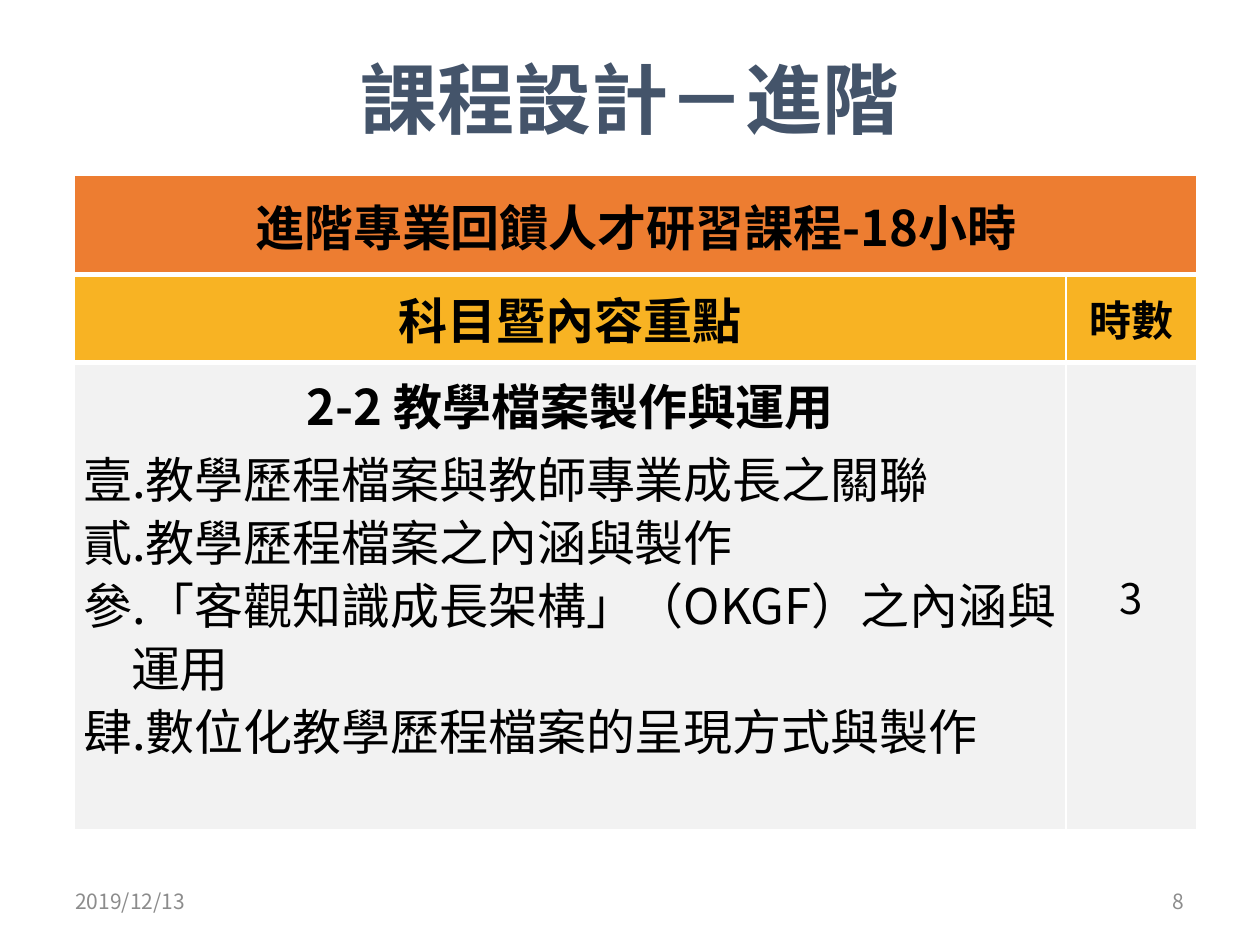
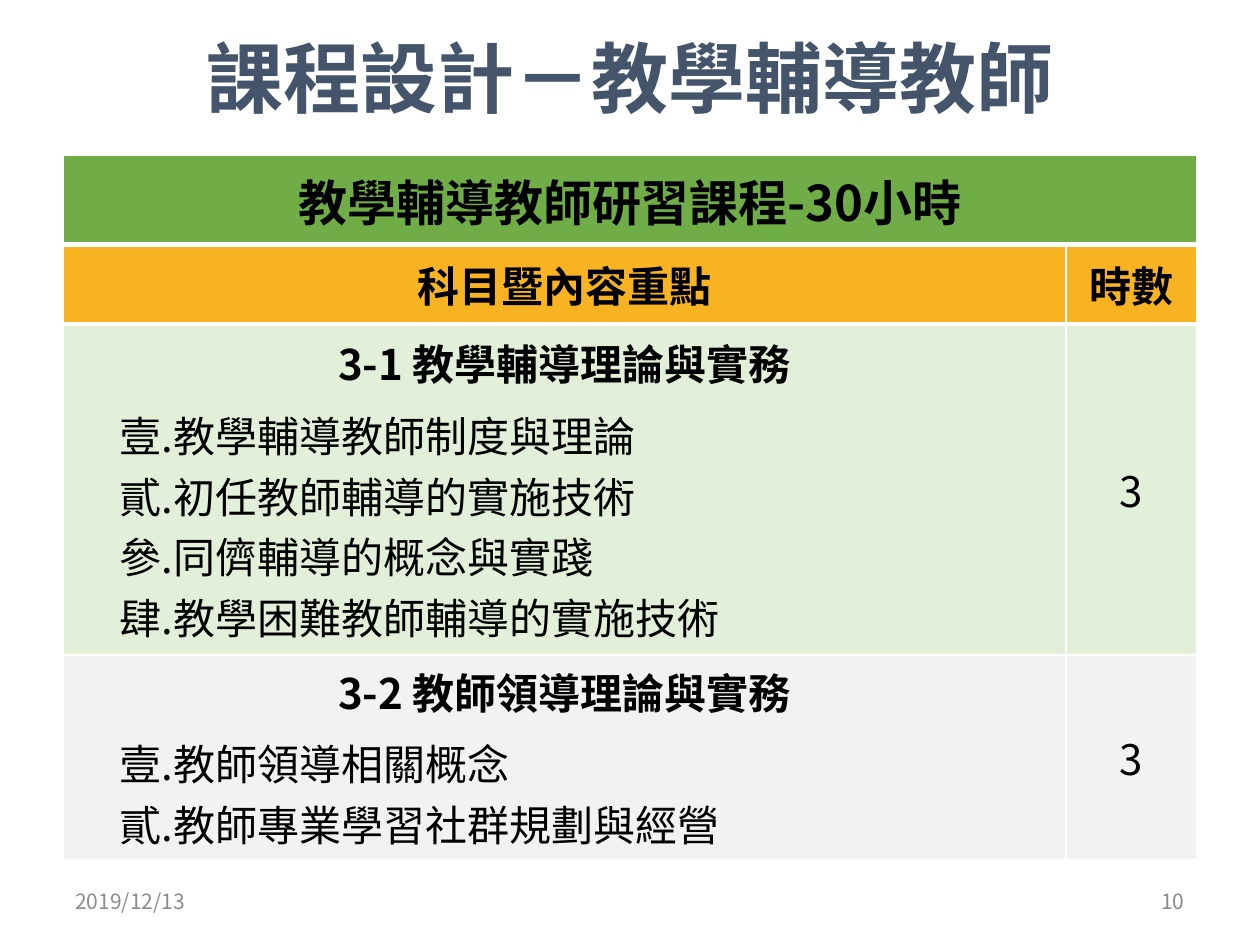
from lxml import etree
from pptx import Presentation
from pptx import util as u
from pptx.dml.color import RGBColor
from pptx.enum import text
from pptx.oxml.ns import qn

FONT = "Noto Sans CJK SC"
INK, NAVY, GREY, WHITE = "000000", "44546A", "8C8C8C", "FFFFFF"
AMBER, PALE = "F8B323", "F2F2F2"
WIDE, HIGH = u.Inches(10), u.Inches(7.5)
EDGE = 5            # side margin, percent of the width
HOURS = 10.4        # width of the hours column, percent of the width
LEFT, MID, RIGHT = (text.PP_ALIGN.LEFT, text.PP_ALIGN.CENTER,
                    text.PP_ALIGN.RIGHT)


# Lengths as percent of the slide
def wide(share):
    return u.Emu(round(WIDE * share / 100))


def high(share):
    return u.Emu(round(HIGH * share / 100))


def hue(code):
    return RGBColor.from_string(code)


# Text
def style(para, size, color=INK, bold=False, align=LEFT):
    para.alignment = align
    for run in para.runs:
        font = run.font
        font.name, font.size, font.bold = FONT, u.Pt(size), bold
        font.color.rgb = hue(color)
        etree.SubElement(font._element, qn("a:ea"), typeface=FONT)


def number(para, hang):
    props = para._p.get_or_add_pPr()
    indent = u.Inches(0.38)
    props.set("marL", str(indent))
    props.set("indent", str(-indent if hang else 0))
    etree.SubElement(props, qn("a:buFont"), typeface=FONT)
    etree.SubElement(props, qn("a:buAutoNum"), type="ea1ChtPeriod")


def add_title(slide, words, top):
    title = slide.shapes.title
    title.left, title.top = wide(EDGE), high(top)
    title.width, title.height = wide(100 - 2 * EDGE), high(16.67)
    frame = title.text_frame
    frame.text = words
    frame.vertical_anchor = text.MSO_ANCHOR.MIDDLE
    style(frame.paragraphs[0], 44, NAVY, True, MID)


def add_foot(slide, words, left, align):
    box = slide.shapes.add_textbox(wide(left), high(92.67),
                                   wide(23.33), high(5.33))
    frame = box.text_frame
    frame.word_wrap = True
    frame.vertical_anchor = text.MSO_ANCHOR.MIDDLE
    frame.text = words
    style(frame.paragraphs[0], 12, GREY, align=align)


# Table cells
def paint(cell, fill, above, below):
    props = cell._tc.get_or_add_tcPr()
    for side, width in zip("LRTB", (1, 1, above, below)):
        line = etree.SubElement(props, qn("a:ln" + side),
                                w=str(u.Pt(width)))
        solid = etree.SubElement(line, qn("a:solidFill"))
        etree.SubElement(solid, qn("a:srgbClr"), val=WHITE)
    cell.fill.solid()
    cell.fill.fore_color.rgb = hue(fill)
    cell.vertical_anchor = text.MSO_ANCHOR.MIDDLE


def trim(cell, low=0):
    cell.margin_left = cell.margin_right = u.Inches(0.07)
    cell.margin_top, cell.margin_bottom = 0, u.Inches(low)


def label(cell, words, size, bold=True):
    cell.text_frame.text = words
    style(cell.text_frame.paragraphs[0], size, bold=bold, align=MID)


def outline(cell, head, points, size, lead, hang):
    frame = cell.text_frame
    frame.text = "\n".join([head, *points])
    first, *rest = frame.paragraphs
    style(first, size, bold=True, align=MID)
    first.space_after = u.Pt(6)
    for para in rest:
        number(para, hang)
        style(para, size)
        if lead:
            para.line_spacing = u.Pt(lead)


def add_plan(slide, left, top, rows, band, head, units, size,
             lead=None, hang=False, low=0):
    span = 100 - EDGE - left
    table = slide.shapes.add_table(len(rows), 2, wide(left), high(top),
                                   wide(span), high(sum(rows))).table
    table.columns[0].width = wide(span - HOURS)
    table.columns[1].width = wide(HOURS)
    for row, share in zip(table.rows, rows):
        row.height = high(share)

    # Fills and borders: thick rules under the two heading rows
    fills = [band, AMBER] + [unit[3] for unit in units]
    rules = [1, 3, 3] + [1] * len(units)
    for i, fill in enumerate(fills):
        for cell in table.rows[i].cells:
            paint(cell, fill, rules[i], rules[i + 1])

    # Headings
    table.cell(0, 0).merge(table.cell(0, 1))
    label(table.cell(0, 0), head, 28)
    label(table.cell(1, 0), "科目暨內容重點", size)
    label(table.cell(1, 1), "時數", 24)

    # Course units
    for i, (name, points, hours, _) in enumerate(units, 2):
        body, side = table.cell(i, 0), table.cell(i, 1)
        trim(body, low)
        trim(side)
        outline(body, name, points, size, lead, hang)
        label(side, hours, 24, False)


def add_page(deck, title, top, page):
    slide = deck.slides.add_slide(deck.slide_layouts[5])
    add_title(slide, title, top)
    add_foot(slide, "2019/12/13", EDGE, LEFT)
    add_foot(slide, page, 100 - EDGE - 23.33, RIGHT)
    return slide


def main():
    deck = Presentation()
    deck.slide_width, deck.slide_height = WIDE, HIGH

    # Advanced course
    slide = add_page(deck, "課程設計－進階", 2, "8")
    units = [("2-2 教學檔案製作與運用",
              ["教學歷程檔案與教師專業成長之關聯",
               "教學歷程檔案之內涵與製作",
               "「客觀知識成長架構」（OKGF）之內涵與運用",
               "數位化教學歷程檔案的呈現方式與製作"], "3", PALE)]
    add_plan(slide, 5.9, 18.53, [10.53, 9.33, 49.47], "ED7D31",
             "進階專業回饋人才研習課程-18小時", units, 28,
             lead=36, hang=True, low=0.47)

    # Mentor teacher course
    slide = add_page(deck, "課程設計－教學輔導教師", -0.27, "10")
    units = [("3-1 教學輔導理論與實務",
              ["教學輔導教師制度與理論", "初任教師輔導的實施技術",
               "同儕輔導的概念與實踐", "教學困難教師輔導的實施技術"],
              "3", "E2F0D9"),
             ("3-2 教師領導理論與實務",
              ["教師領導相關概念", "教師專業學習社群規劃與經營"],
              "3", PALE)]
    add_plan(slide, EDGE, 16.4, [9.47, 8.4, 35.07, 21.6], "70AD47",
             "教學輔導教師研習課程-30小時", units, 24)

    deck.save("out.pptx")


if __name__ == "__main__":
    main()
